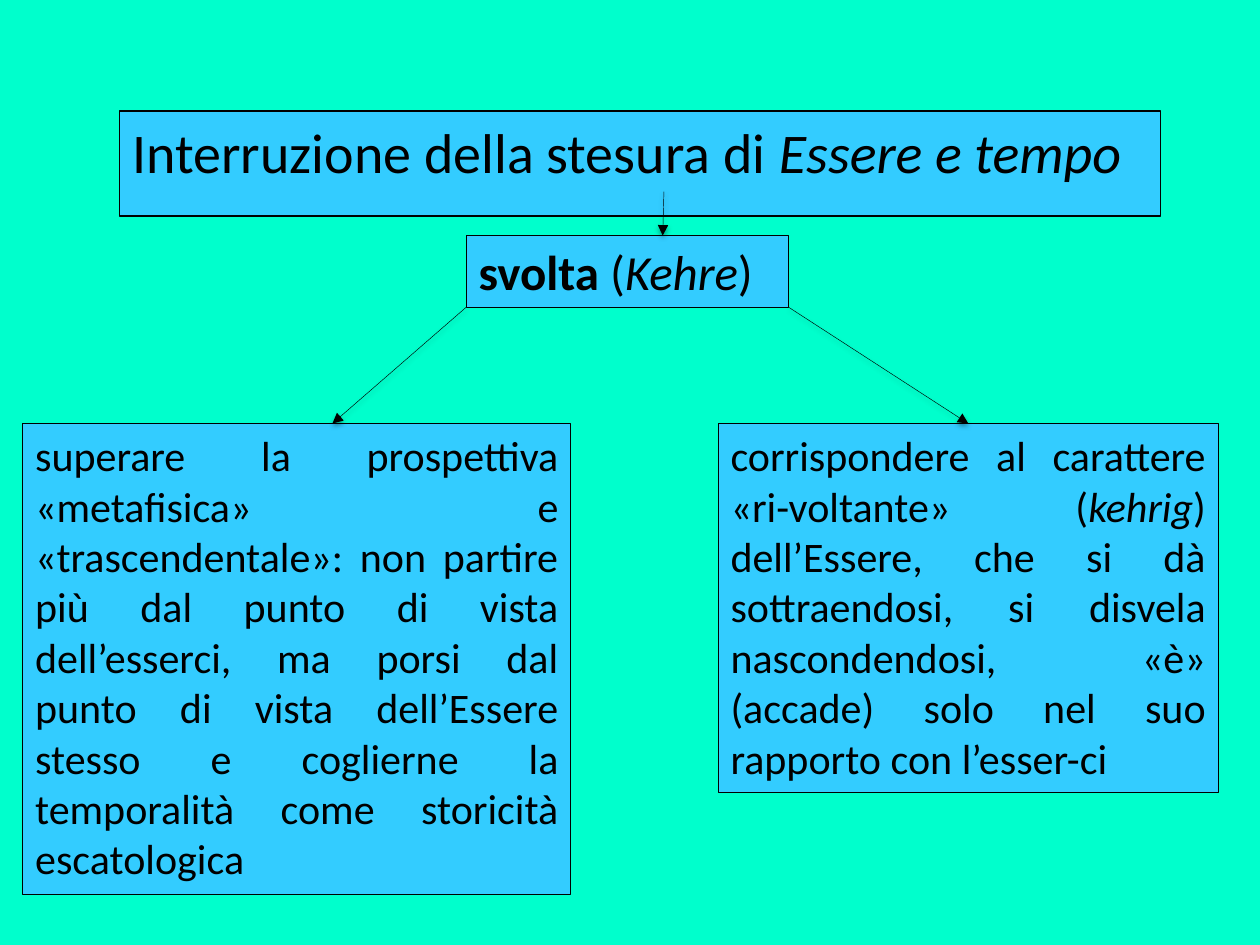
import pptx
import pptx.util
import pptx.dml.color
import pptx.enum.dml
import pptx.enum.shapes
import pptx.enum.text
import pptx.oxml

Pt = pptx.util.Pt
ALIGN = pptx.enum.text.PP_ALIGN
NS = 'xmlns:a="http://schemas.openxmlformats.org/drawingml/2006/main"'
SHADOW = (f'<a:effectLst {NS}><a:outerShdw blurRad="{Pt(3.1)}" dist="{Pt(1.6)}" '
          'dir="5400000" rotWithShape="0"><a:srgbClr val="000000">'
          '<a:alpha val="38000"/></a:srgbClr></a:outerShdw></a:effectLst>')


def paint(fmt, color):
    """Give a fill a solid colour from a hex string."""
    fmt.solid()
    fmt.fore_color.rgb = pptx.dml.color.RGBColor.from_string(color)


def add_run(p, text, size=24, bold=False, italic=False, color="000000"):
    r = p.add_run()
    r.text = text
    r.font.name = "Calibri"
    r.font.size = Pt(size)
    r.font.bold = bold
    r.font.italic = italic
    paint(r.font.fill, color)


prs = pptx.Presentation()
prs.slide_width, prs.slide_height = Pt(720), Pt(540)
s = prs.slides.add_slide(prs.slide_layouts[5])
paint(s.background.fill, "00FFCC")

# Boxes: left, top, width, height, alignment, size, runs
title = (68.4, 63.4, 594.7, 46.1, ALIGN.LEFT, 32, [
    ("Interruzione della stesura di ", {}),
    ("Essere e tempo", {"italic": True})])
turn = (266.4, 134.6, 184.3, 41, ALIGN.LEFT, 28, [
    ("svolta ", {"bold": True}), ("(", {}), ("Kehre", {"italic": True}), (")", {})])
overcome = (13, 242, 313.2, 269.3, ALIGN.JUSTIFY, 24, [
    ("superare la prospettiva «metafisica» e «trascendentale»: non partire più "
     "dal punto di vista dell’esserci, ma porsi dal punto di vista dell’Essere "
     "stesso e coglierne la temporalità come storicità escatologica", {})])
respond = (410.4, 242, 285.8, 211, ALIGN.JUSTIFY, 24, [
    ("corrispondere al carattere «ri-voltante» (", {}),
    ("kehrig", {"italic": True}),
    (") dell’Essere, che si dà sottraendosi, si disvela nascondendosi, «è» "
     "(accade) solo nel suo rapporto con l’esser-ci", {})])

boxes = []
for left, top, width, height, align, size, runs in (title, turn, overcome, respond):
    if boxes:
        sp = s.shapes.add_textbox(0, 0, 0, 0)
    else:
        sp = s.shapes.title
    sp.left, sp.top, sp.width, sp.height = Pt(left), Pt(top), Pt(width), Pt(height)
    paint(sp.fill, "33CCFF")
    paint(sp.line.fill, "000000")
    sp.line.width = Pt(0.75)
    tf = sp.text_frame
    tf.word_wrap = True
    tf.auto_size = pptx.enum.text.MSO_AUTO_SIZE.SHAPE_TO_FIT_TEXT
    tf.vertical_anchor = pptx.enum.text.MSO_ANCHOR.TOP
    p = tf.paragraphs[0]
    p.alignment = align
    for text, style in runs:
        add_run(p, text, size=size, **style)
    boxes.append(sp)

# Arrows: from x, y to x, y, and the box whose top middle the arrow meets
arrows = [
    (379.4, 109.5, 378.7, 134.6, None),
    (266.4, 175.6, 190, 242, None),
    (450.7, 175.6, 553.3, 242, boxes[3]),
]
for x1, y1, x2, y2, target in arrows:
    c = s.shapes.add_connector(pptx.enum.shapes.MSO_CONNECTOR.STRAIGHT,
                               Pt(x1), Pt(y1), Pt(x2), Pt(y2))
    if target:
        c.end_connect(target, 0)
    paint(c.line.fill, "000000")
    c.line.width = Pt(0.25)
    c.line._get_or_add_ln().append(
        pptx.oxml.parse_xml(f'<a:tailEnd {NS} type="triangle"/>'))
    c._element.spPr.append(pptx.oxml.parse_xml(SHADOW))

prs.save("out.pptx")
